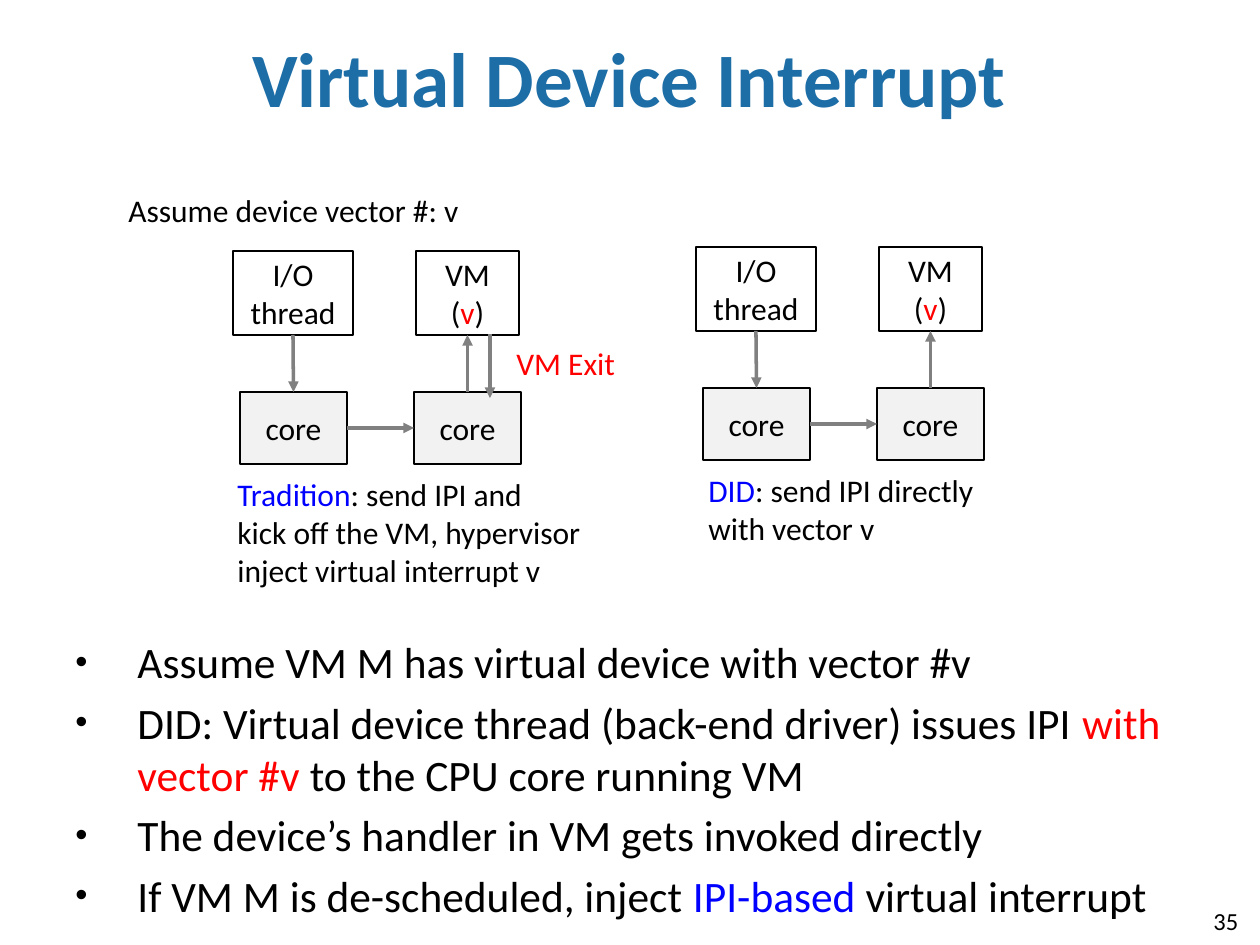
from lxml.etree import SubElement
from pptx import Presentation
from pptx.dml.color import RGBColor
from pptx.enum.shapes import MSO_CONNECTOR as Connector, MSO_SHAPE as Shape
from pptx.enum.text import MSO_ANCHOR as Anchor, PP_ALIGN as Align
from pptx.oxml.ns import qn
from pptx.util import Pt

EMU_PER_PX = 914400 / 126
FONT = "Calibri"
BLACK, WHITE, RED, BLUE = "000000", "FFFFFF", "FF0000", "0000FF"
GREY, PALE, TITLE_BLUE = "808080", "F2F2F2", "1D6EA7"
BOTTOM, RIGHT, TOP, LEFT = 2, 3, 0, 1


def px(*lengths):
    return [round(length * EMU_PER_PX) for length in lengths]


def color(value):
    return RGBColor.from_string(value)


def style_font(font, size, value, bold=False):
    font.name, font.size, font.bold = FONT, Pt(size), bold
    font.color.rgb = color(value)


def write(paragraph, runs, size, align=Align.LEFT):
    """Fill a paragraph with (text, colour) runs."""
    paragraph.alignment = align
    for text, value in runs:
        run = paragraph.add_run()
        run.text = text
        style_font(run.font, size, value)


def add_text(slide, box, paragraphs, size=18, wrap=False):
    frame = slide.shapes.add_textbox(*px(*box)).text_frame
    frame.word_wrap = wrap
    for index, runs in enumerate(paragraphs):
        paragraph = frame.add_paragraph() if index else frame.paragraphs[0]
        write(paragraph, runs, size)
    return frame


def add_box(slide, box, runs, fill=WHITE, line_width=1):
    shape = slide.shapes.add_shape(Shape.RECTANGLE, *px(*box))
    shape.shadow.inherit = False
    shape.fill.solid()
    shape.fill.fore_color.rgb = color(fill)
    shape.line.color.rgb = color(BLACK)
    shape.line.width = Pt(line_width)
    frame = shape.text_frame
    frame.word_wrap = True
    frame.vertical_anchor = Anchor.MIDDLE
    write(frame.paragraphs[0], runs, 18, Align.CENTER)
    return shape


def add_arrow(slide, points=(0, 0, 0, 0)):
    arrow = slide.shapes.add_connector(Connector.STRAIGHT, *px(*points))
    arrow.line.color.rgb = color(GREY)
    arrow.line.width = Pt(2)
    SubElement(arrow.line._get_or_add_ln(), qn("a:tailEnd"), type="triangle")
    SubElement(arrow._element.spPr, qn("a:effectLst"))
    return arrow


def join(slide, start, start_side, end, end_side):
    arrow = add_arrow(slide)
    arrow.begin_connect(start, start_side)
    arrow.end_connect(end, end_side)


def add_bullet(paragraph, indent):
    margin = px(indent)[0]
    properties = paragraph._p.get_or_add_pPr()
    properties.set("marL", str(margin))
    properties.set("indent", str(-margin))
    SubElement(SubElement(properties, qn("a:buClr")), qn("a:srgbClr"), val=BLACK)
    SubElement(properties, qn("a:buSzPct"), val="80000")
    SubElement(properties, qn("a:buFont"), typeface="Arial")
    SubElement(properties, qn("a:buChar"), char="•")


def add_bullet_list(slide, box, paragraphs):
    frame = add_text(slide, box, paragraphs, 24.8, wrap=True)
    for index, paragraph in enumerate(frame.paragraphs):
        add_bullet(paragraph, 62)
        paragraph.space_before = Pt(2.4 if index else 0)
        paragraph.space_after = Pt(2.4)


def add_diagram(slide, left, top):
    """Two cores, with the I/O thread and the VM above them."""
    def core(x):
        return add_box(slide, (left + x, top + 141, 107, 72),
                       [("core", BLACK)], PALE, 0.75)

    thread = add_box(slide, (left, top, 120, 84), [("I/O thread", BLACK)])
    machine = add_box(slide, (left + 183, top, 103, 84),
                      [("VM (", BLACK), ("v", RED), (")", BLACK)])
    sender, receiver = core(7), core(181)
    join(slide, thread, BOTTOM, sender, TOP)
    join(slide, sender, RIGHT, receiver, LEFT)
    join(slide, receiver, TOP, machine, BOTTOM)


def set_title(slide, text, box):
    title = slide.shapes.title
    title.left, title.top, title.width, title.height = px(*box)
    frame = title.text_frame
    frame.text = text
    frame.vertical_anchor = Anchor.MIDDLE
    paragraph = frame.paragraphs[0]
    paragraph.alignment = Align.CENTER
    style_font(paragraph.runs[0].font, 44, TITLE_BLUE, bold=True)


def main():
    presentation = Presentation()
    presentation.slide_width, presentation.slide_height = px(1260, 945)
    slide = presentation.slides.add_slide(presentation.slide_layouts[5])

    # Title and page number
    set_title(slide, "Virtual Device Interrupt", (44, 27, 1171, 100))
    add_text(slide, (1201, 900, 54, 42), [[("35", BLACK)]], 14)

    # Traditional delivery
    add_text(slide, (116, 185, 360, 50), [[("Assume device vector #: v", BLACK)]])
    add_diagram(slide, 233, 251)
    add_arrow(slide, (490, 334, 490, 398))
    add_text(slide, (504, 338, 125, 50), [[("VM Exit", RED)]])
    add_text(slide, (225, 469, 396, 127), [
        [("Tradition", BLUE), (": send IPI and", BLACK)],
        [("kick off the VM, hypervisor inject virtual interrupt v", BLACK)],
    ], wrap=True)

    # Direct delivery
    add_diagram(slide, 696, 247)
    add_text(slide, (696, 465, 294, 89), [
        [("DID", BLUE), (": send IPI directly", BLACK)],
        [("with vector v", BLACK)],
    ])

    # Explanation
    add_bullet_list(slide, (63, 629, 1152, 257), [
        [("Assume VM M has virtual device with vector #v", BLACK)],
        [("DID: Virtual device thread (back-end driver) issues IPI ", BLACK),
         ("with vector #v", RED), (" to the CPU core running VM", BLACK)],
        [("The device’s handler in VM gets invoked directly", BLACK)],
        [("If VM M is de-scheduled, inject ", BLACK), ("IPI-based", BLUE),
         (" virtual interrupt", BLACK)],
    ])

    presentation.save("out.pptx")


if __name__ == "__main__":
    main()
